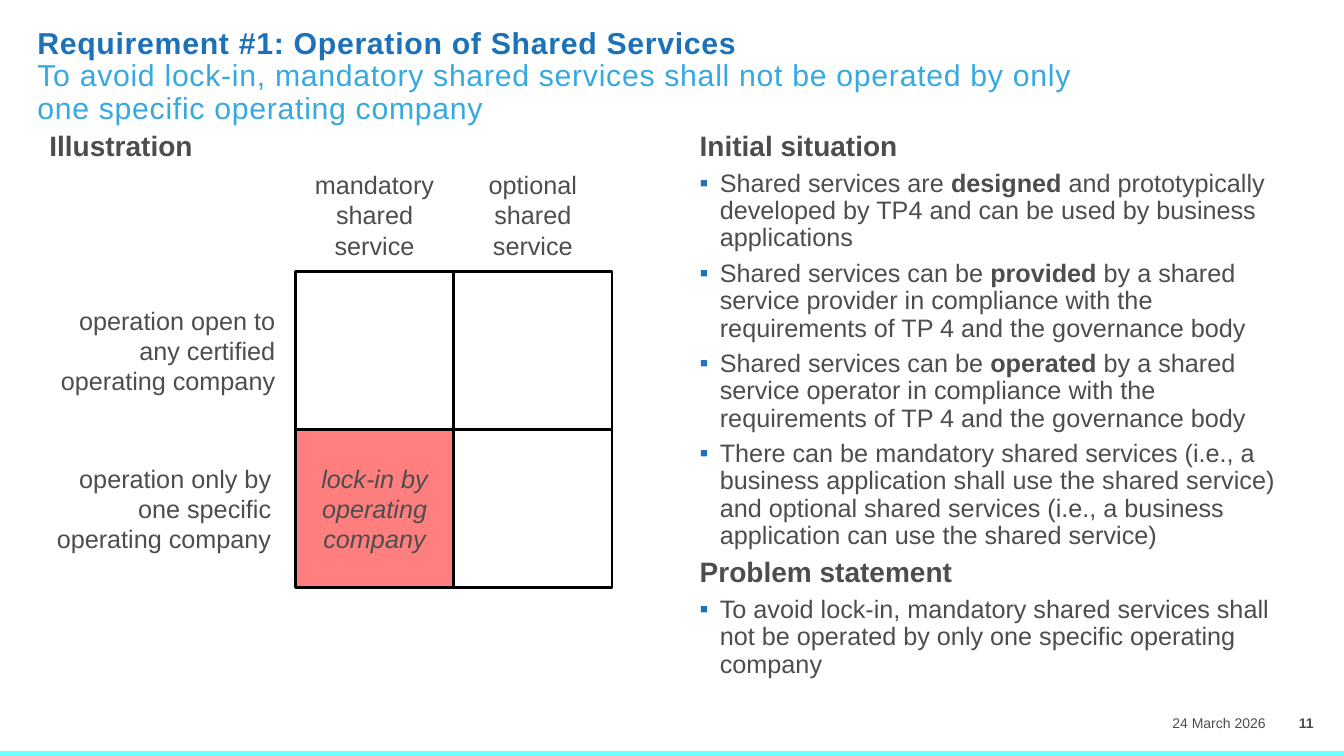
from dataclasses import dataclass

from lxml import etree
from pptx import Presentation
from pptx import util as u
from pptx.dml.color import RGBColor
from pptx.enum import shapes, text
from pptx.oxml import ns

WIDTH, HEIGHT = 13.33, 7.5
CELL = 1.57                           # side of one matrix cell
MATRIX_LEFT, MATRIX_TOP = 2.93, 2.69
LABEL_HEIGHT = 0.6 * CELL
BODY_TOP, BODY_WIDTH, BODY_HEIGHT = 1.23, 6.14, 5.59
LEFT_COLUMN, RIGHT_COLUMN = 0.37, 6.82


@dataclass(frozen=True)
class Theme:
    font: str = "Arial"
    ink: str = "4D4D4D"
    blue: str = "1D71B8"
    sky: str = "36A9E1"
    cyan: str = "6CFFFF"
    red: str = "FF0000"
    black: str = "000000"
    title: float = 21.6
    heading: float = 20
    body: float = 18
    footer: float = 10


THEME = Theme()
LEFT, CENTER, RIGHT = text.PP_ALIGN.LEFT, text.PP_ALIGN.CENTER, text.PP_ALIGN.RIGHT

# Plain strings are headings; tuples are bullets whose odd parts are bold
SITUATION = [
    "Initial situation",
    ("Shared services are ", "designed",
     " and prototypically developed by TP4 and can be used by business applications"),
    ("Shared services can be ", "provided",
     " by a shared service provider in compliance with the requirements of TP 4"
     " and the governance body"),
    ("Shared services can be ", "operated",
     " by a shared service operator in compliance with the requirements of TP 4"
     " and the governance body"),
    ("There can be mandatory shared services (i.e., a business application shall use"
     " the shared service) and optional shared services (i.e., a business application"
     " can use the shared service)",),
    "Problem statement",
    ("To avoid lock-in, mandatory shared services shall not be operated by only one"
     " specific operating company",),
]


def box(left, top, width, height):
    return [u.Inches(length) for length in (left, top, width, height)]


def style(font, size, color=THEME.ink, bold=False, italic=False):
    font.name, font.size = THEME.font, u.Pt(size)
    font.bold, font.italic = bold, italic
    font.color.rgb = RGBColor.from_string(color)


def set_insets(frame, left=0, top=0, right=0, bottom=0):
    frame.margin_left, frame.margin_top = u.Inches(left), u.Inches(top)
    frame.margin_right, frame.margin_bottom = u.Inches(right), u.Inches(bottom)


def add_title(slide, headline, claim):
    title = slide.shapes.title
    title.left, title.top, title.width, title.height = box(LEFT_COLUMN, 0.28, 10.63, 0.79)
    frame = title.text_frame
    frame.text = f"{headline}\n{claim}"
    frame.word_wrap, frame.auto_size = True, text.MSO_AUTO_SIZE.NONE
    frame.vertical_anchor = text.MSO_ANCHOR.TOP
    set_insets(frame)
    for line, color, bold in zip(frame.paragraphs, (THEME.blue, THEME.sky), (True, False)):
        line.alignment, line.line_spacing = LEFT, 0.9
        style(line.runs[0].font, THEME.title, color, bold)
        line.runs[0].font._element.set("spc", "50")


def add_bullet(paragraph):
    properties = paragraph._p.get_or_add_pPr()
    properties.set("marL", str(u.Inches(0.2)))
    properties.set("indent", str(-u.Inches(0.2)))
    color = etree.SubElement(properties, ns.qn("a:buClr"))
    etree.SubElement(color, ns.qn("a:srgbClr"), val=THEME.blue)
    etree.SubElement(properties, ns.qn("a:buFont"), typeface=THEME.font)
    etree.SubElement(properties, ns.qn("a:buChar"), char="▪")


def add_body(slide, left, items):
    frame = slide.shapes.add_textbox(*box(left, BODY_TOP, BODY_WIDTH, BODY_HEIGHT)).text_frame
    frame.word_wrap = True
    set_insets(frame, 0.12, 0.08, 0.04, 0.04)
    for index, item in enumerate(items):
        paragraph = frame.paragraphs[0] if index == 0 else frame.add_paragraph()
        paragraph.line_spacing = 0.9
        paragraph.space_before = u.Pt(6 if index else 0)
        if isinstance(item, str):
            paragraph.text = item
            style(paragraph.runs[0].font, THEME.heading, bold=True)
            continue
        add_bullet(paragraph)
        for part, words in enumerate(item):
            run = paragraph.add_run()
            run.text = words
            style(run.font, THEME.body, bold=part % 2 == 1)


def write(frame, words, align, size, bold=False, italic=False):
    frame.text = words
    frame.word_wrap = True
    frame.vertical_anchor = text.MSO_ANCHOR.MIDDLE
    frame.paragraphs[0].alignment = align
    style(frame.paragraphs[0].runs[0].font, size, bold=bold, italic=italic)


def add_label(slide, words, place, align):
    frame = slide.shapes.add_textbox(*box(*place)).text_frame
    set_insets(frame)
    write(frame, words, align, THEME.body)


def add_cell(slide, column, row, words=None):
    cell = slide.shapes.add_shape(
        shapes.MSO_SHAPE.RECTANGLE,
        *box(MATRIX_LEFT + column * CELL, MATRIX_TOP + row * CELL, CELL, CELL))
    cell.shadow.inherit = False
    cell.line.color.rgb = RGBColor.from_string(THEME.black)
    cell.line.width = u.Pt(2)
    if words is None:
        cell.fill.background()
        return
    cell.fill.solid()
    cell.fill.fore_color.rgb = RGBColor.from_string(THEME.red)
    tint = cell._element.spPr.find(ns.qn("a:solidFill")).find(ns.qn("a:srgbClr"))
    etree.SubElement(tint, ns.qn("a:alpha"), val="50000")
    write(cell.text_frame, words, CENTER, THEME.body, italic=True)


def add_matrix(slide, columns, rows, filled):
    for row in range(len(rows)):
        for column in range(len(columns)):
            add_cell(slide, column, row, filled.get((column, row)))
    for column, words in enumerate(columns):
        add_label(slide, words, (MATRIX_LEFT + column * CELL, 1.66, CELL, LABEL_HEIGHT), CENTER)
    for row, (words, left) in enumerate(rows):
        top = MATRIX_TOP + row * CELL + (CELL - LABEL_HEIGHT) / 2
        add_label(slide, words, (left, top, 2.36, LABEL_HEIGHT), RIGHT)


def add_footer(slide, date, number):
    date_box = slide.shapes.add_textbox(*box(10.68, 6.98, 1.97, 0.38))
    write(date_box.text_frame, date, RIGHT, THEME.footer)
    number_box = slide.shapes.add_textbox(*box(12.69, 6.98, 0.53, 0.38))
    write(number_box.text_frame, number, CENTER, THEME.footer, bold=True)


def add_bottom_rule(slide):
    y = u.Inches(HEIGHT - 0.02)
    rule = slide.shapes.add_connector(
        shapes.MSO_CONNECTOR.STRAIGHT, 0, y, u.Inches(WIDTH), y)
    rule.line.color.rgb = RGBColor.from_string(THEME.cyan)
    rule.line.width = u.Pt(4.5)
    etree.SubElement(rule._element.spPr, ns.qn("a:effectLst"))


def main():
    deck = Presentation()
    deck.slide_width, deck.slide_height = u.Inches(WIDTH), u.Inches(HEIGHT)
    slide = deck.slides.add_slide(deck.slide_layouts.get_by_name("Title Only"))

    # Frame: rule, title and footer
    add_bottom_rule(slide)
    add_title(slide, "Requirement #1: Operation of Shared Services",
              "To avoid lock-in, mandatory shared services shall not be operated by only"
              " one specific operating company")
    add_footer(slide, "24 March 2026", "11")

    # Left: illustration matrix, right: situation and problem
    add_body(slide, LEFT_COLUMN, ["Illustration"])
    add_body(slide, RIGHT_COLUMN, SITUATION)
    add_matrix(slide,
               ["mandatory shared service", "optional shared service"],
               [("operation open to any certified operating company", 0.37),
                ("operation only by one specific operating company", 0.33)],
               {(0, 1): "lock-in by operating company"})
    deck.save("out.pptx")


if __name__ == "__main__":
    main()
